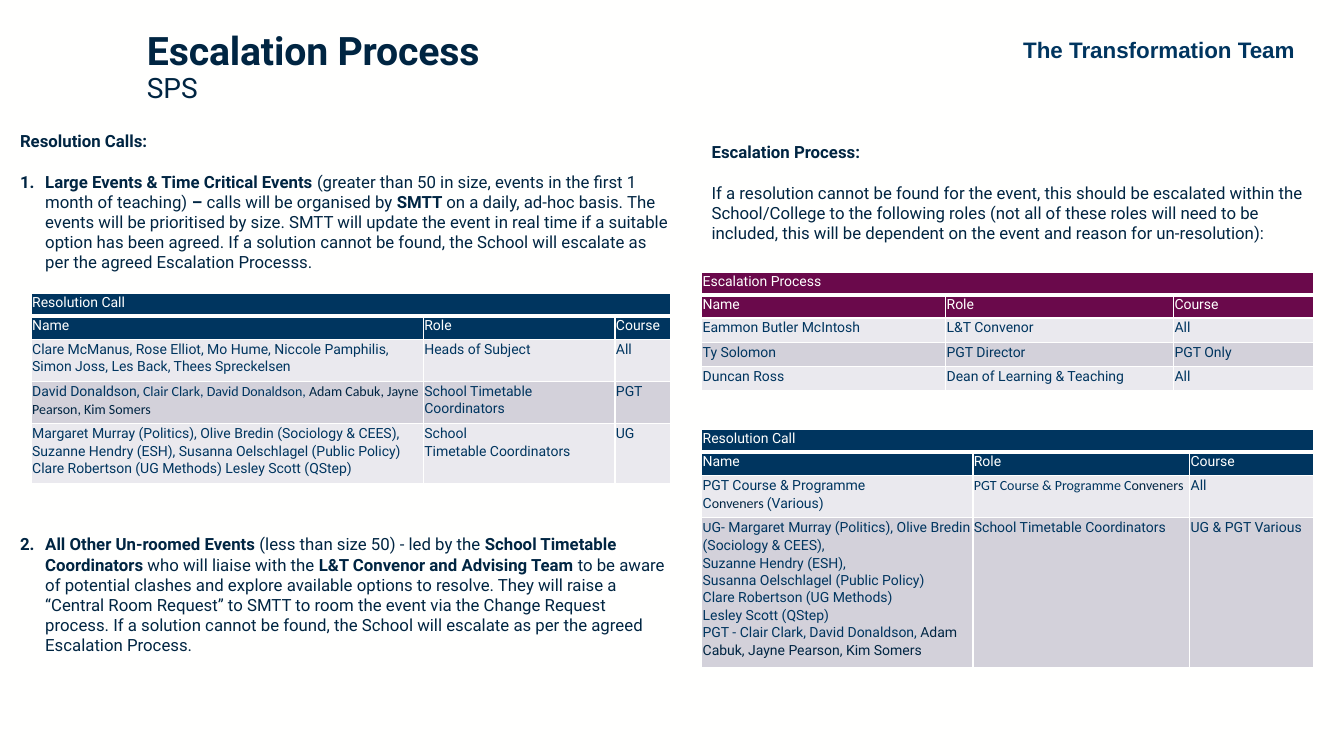
from lxml import etree
from pptx import Presentation
from pptx import util as u
from pptx.dml.color import RGBColor
from pptx.enum import text
from pptx.oxml import ns

THEME = {
    "navy": "002542", "blue": "00355F", "plum": "6A094B", "paper": "FFFFFE",
    "bands": ("EAE9EE", "D3D1DA"),
    "font": "Roboto", "alt_font": "Calibri", "brand_font": "Arial",
    "title": 28, "subtitle": 20, "brand": 16, "body": 12, "cell": 10,
    "line": 14.4,
}
ALT = {"font": THEME["alt_font"]}
DARK = {"color": THEME["navy"]}
ALT_DARK = {**ALT, **DARK}
BOLD = {"bold": True}
COORDINATORS = "School Timetable Coordinators"
COLUMNS = ["Name", "Role", "Course"]

# A paragraph is a list of (words, format) runs; spacing is in blank lines above.
RESOLUTION_TEXT = [
    {"runs": [("Resolution Calls:", BOLD)]},
    {"numbered": True, "gap": 1, "runs": [
        ("Large Events & Time Critical Events ", BOLD),
        ("(greater than 50 in size, events in the first 1 month of teaching) ", {}),
        ("– ", BOLD),
        ("calls will be organised by ", {}),
        ("SMTT ", BOLD),
        ("on a daily, ad-hoc basis. The events will be prioritised by size. SMTT will "
         "update the event in real time if a suitable option has been agreed. If a "
         "solution cannot be found, the School will escalate as per the agreed "
         "Escalation Processs.", {})]},
    {"numbered": True, "gap": 13, "runs": [
        ("All Other Un-roomed Events ", BOLD),
        ("(less than size 50) - led by the ", {}),
        ("School Timetable Coordinators ", BOLD),
        ("who will liaise with the ", {}),
        ("L&T Convenor and Advising Team ", BOLD),
        ("to be aware of potential clashes and explore available options to resolve. "
         "They will raise a “Central Room Request” to SMTT to room the event via the "
         "Change Request process. If a solution cannot be found, the School will "
         "escalate as per the agreed Escalation Process.", {})]},
]
ESCALATION_TEXT = [
    {"runs": [("Escalation Process:", BOLD)]},
    {"gap": 1, "runs": [
        ("If a resolution cannot be found for the event, this should be escalated within "
         "the School/College to the following roles (not all of these roles will need to "
         "be included, this will be dependent on the event and reason for "
         "un-resolution):", {})]},
]

# A cell is a string, or a list of paragraphs made of runs.
TABLES = [
    {"title": "Resolution Call", "accent": THEME["blue"], "at": (6.96, 4.26),
     "widths": (2.69, 2.15, 1.23), "heights": (0.22, 0.22, 0.42, 1.48),
     "rows": [
         [[[("PGT Course & Programme\nC", {}), ("onveners ", ALT_DARK), ("(Various)", {})]],
          [[("PGT Course & Programme C", ALT), ("onveners", ALT_DARK)]],
          "All"],
         [[[("U", ALT),
            ("G- Margaret Murray (Politics), Olive Bredin (Sociology & CEES),", {})],
           [("Suzanne Hendry (ESH),", {})],
           [("Susanna Oelschlagel (Public Policy)", {})],
           [("Clare Robertson (UG Methods)", {})],
           [("Lesley Scott (QStep)", {})],
           [("PGT - Clair Clark, David Donaldson, ", {}),
            ("Adam Cabuk, Jayne Pearson, Kim Somers", DARK)]],
          COORDINATORS, "UG & PGT Various"]]},
    {"title": "Escalation Process", "accent": THEME["plum"], "at": (6.96, 2.7),
     "widths": (2.42, 2.26, 1.39), "heights": (0.22, 0.22, 0.24, 0.24, 0.22),
     "rows": [
         ["Eammon Butler McIntosh", "L&T Convenor", "All"],
         ["Ty Solomon", "PGT Director", "PGT Only"],
         ["Duncan Ross", "Dean of Learning & Teaching", "All"]]},
    {"title": "Resolution Call", "accent": THEME["blue"], "at": (0.31, 2.91),
     "widths": (3.89, 1.9, 0.55), "heights": (0.22, 0.22, 0.42, 0.42, 0.59),
     "rows": [
         ["Clare McManus, Rose Elliot, Mo Hume, Niccole Pamphilis, Simon Joss, Les Back, "
          "Thees Spreckelsen", "Heads of Subject", "All"],
         [[[("David Donaldson, ", {}), ("Clair Clark, David Donaldson, ", ALT),
            ("Adam Cabuk, Jayne Pearson, Kim Somers", ALT_DARK)]],
          COORDINATORS, "PGT"],
         ["Margaret Murray (Politics), Olive Bredin (Sociology & CEES), Suzanne Hendry "
          "(ESH), Susanna Oelschlagel (Public Policy) Clare Robertson (UG Methods) "
          "Lesley Scott (QStep)",
          "School\nTimetable Coordinators", "UG"]]},
]


def set_all(target, values):
    for name, value in values.items():
        setattr(target, name, value)


def add_run(paragraph, words, size, color, font=THEME["font"], bold=False):
    """Add words in one format; a newline becomes a line break."""
    for index, line in enumerate(words.split("\n")):
        if index:
            paragraph.add_line_break()
        if not line:
            continue
        run = paragraph.add_run()
        run.text = line
        set_all(run.font, {"size": u.Pt(size), "name": font, "bold": bold})
        run.font.color.rgb = RGBColor.from_string(color)


def next_paragraph(frame, index):
    return frame.add_paragraph() if index else frame.paragraphs[0]


def add_box(slide, left, top, width, height, **frame_values):
    box = slide.shapes.add_textbox(*map(u.Inches, (left, top, width, height)))
    set_all(box.text_frame, {"word_wrap": True, **frame_values})
    return box.text_frame


def number(paragraph):
    properties = paragraph._p.get_or_add_pPr()
    indent = u.Inches(0.25)
    properties.set("marL", str(indent))
    properties.set("indent", str(-indent))
    etree.SubElement(properties, ns.qn("a:buFont"), typeface="+mj-lt")
    etree.SubElement(properties, ns.qn("a:buAutoNum"), type="arabicPeriod")


def add_body(slide, box, paragraphs):
    frame = add_box(slide, *box, auto_size=text.MSO_AUTO_SIZE.SHAPE_TO_FIT_TEXT)
    for index, content in enumerate(paragraphs):
        paragraph = next_paragraph(frame, index)
        if content.get("numbered"):
            number(paragraph)
        if "gap" in content:
            paragraph.space_before = u.Pt(content["gap"] * THEME["line"])
        for words, style in content["runs"]:
            add_run(paragraph, words, THEME["body"], THEME["navy"], **style)


def add_border(cell, side, points):
    line = etree.SubElement(cell._tc.get_or_add_tcPr(), ns.qn(f"a:ln{side}"),
                            w=str(u.Pt(points)))
    fill = etree.SubElement(line, ns.qn("a:solidFill"))
    etree.SubElement(fill, ns.qn("a:srgbClr"), val=THEME["paper"])


def fill_cell(cell, content, row, accent):
    heading = row < 2
    thick = {(0, "B"), (1, "T")}
    for side in "LRTB":
        add_border(cell, side, 3 if (row, side) in thick else 1)
    cell.fill.solid()
    cell.fill.fore_color.rgb = RGBColor.from_string(
        accent if heading else THEME["bands"][row % 2])
    anchor = text.MSO_ANCHOR.BOTTOM if heading else text.MSO_ANCHOR.TOP
    edge = u.Inches(0.01)
    set_all(cell, {"margin_left": edge, "margin_right": edge, "margin_top": edge,
                   "margin_bottom": u.Inches(0.05), "vertical_anchor": anchor})
    paragraphs = [[(content, {})]] if isinstance(content, str) else content
    for index, runs in enumerate(paragraphs):
        paragraph = next_paragraph(cell.text_frame, index)
        if not heading:
            paragraph.line_spacing = 1.07
        for words, style in runs:
            color = THEME["paper"] if heading else THEME["blue"]
            add_run(paragraph, words, THEME["cell"], **{"color": color, **style})


def add_contact_table(slide, content):
    widths, heights = content["widths"], content["heights"]
    size = (*content["at"], sum(widths), sum(heights))
    table = slide.shapes.add_table(len(heights), len(widths), *map(u.Inches, size)).table
    set_all(table, {"first_row": False, "horz_banding": False})
    for column, width in zip(table.columns, widths):
        column.width = u.Inches(width)
    for row, height in zip(table.rows, heights):
        row.height = u.Inches(height)
    table.cell(0, 0).merge(table.cell(0, len(widths) - 1))
    rows = [[content["title"], "", ""], COLUMNS, *content["rows"]]
    for row, cells in enumerate(rows):
        for column, cell_content in enumerate(cells):
            fill_cell(table.cell(row, column), cell_content, row, content["accent"])


def main():
    presentation = Presentation()
    set_all(presentation, {"slide_width": u.Inches(13.33), "slide_height": u.Inches(7.5)})
    slide = presentation.slides.add_slide(presentation.slide_layouts[6])
    slide.background.fill.solid()
    slide.background.fill.fore_color.rgb = RGBColor.from_string(THEME["paper"])

    team = add_box(slide, 9.95, 0.31, 3.09, 0.37).paragraphs[0]
    team.alignment = text.PP_ALIGN.CENTER
    add_run(team, "The Transformation Team", THEME["brand"], THEME["blue"],
            THEME["brand_font"], True)

    title = add_box(slide, 1.36, 0.09, 4.23, 1.17,
                    vertical_anchor=text.MSO_ANCHOR.MIDDLE).paragraphs[0]
    title.line_spacing = 0.9
    add_run(title, "Escalation Process\n", THEME["title"], THEME["navy"], bold=True)
    add_run(title, "SPS", THEME["subtitle"], THEME["navy"])
    for run in title.runs:
        run.font._element.set("spc", "-10")

    add_body(slide, (6.96, 1.36, 6.07, 1.31), ESCALATION_TEXT)
    add_body(slide, (0.1, 1.25, 6.69, 5.35), RESOLUTION_TEXT)
    for content in TABLES:
        add_contact_table(slide, content)
    presentation.save("out.pptx")


if __name__ == "__main__":
    main()
